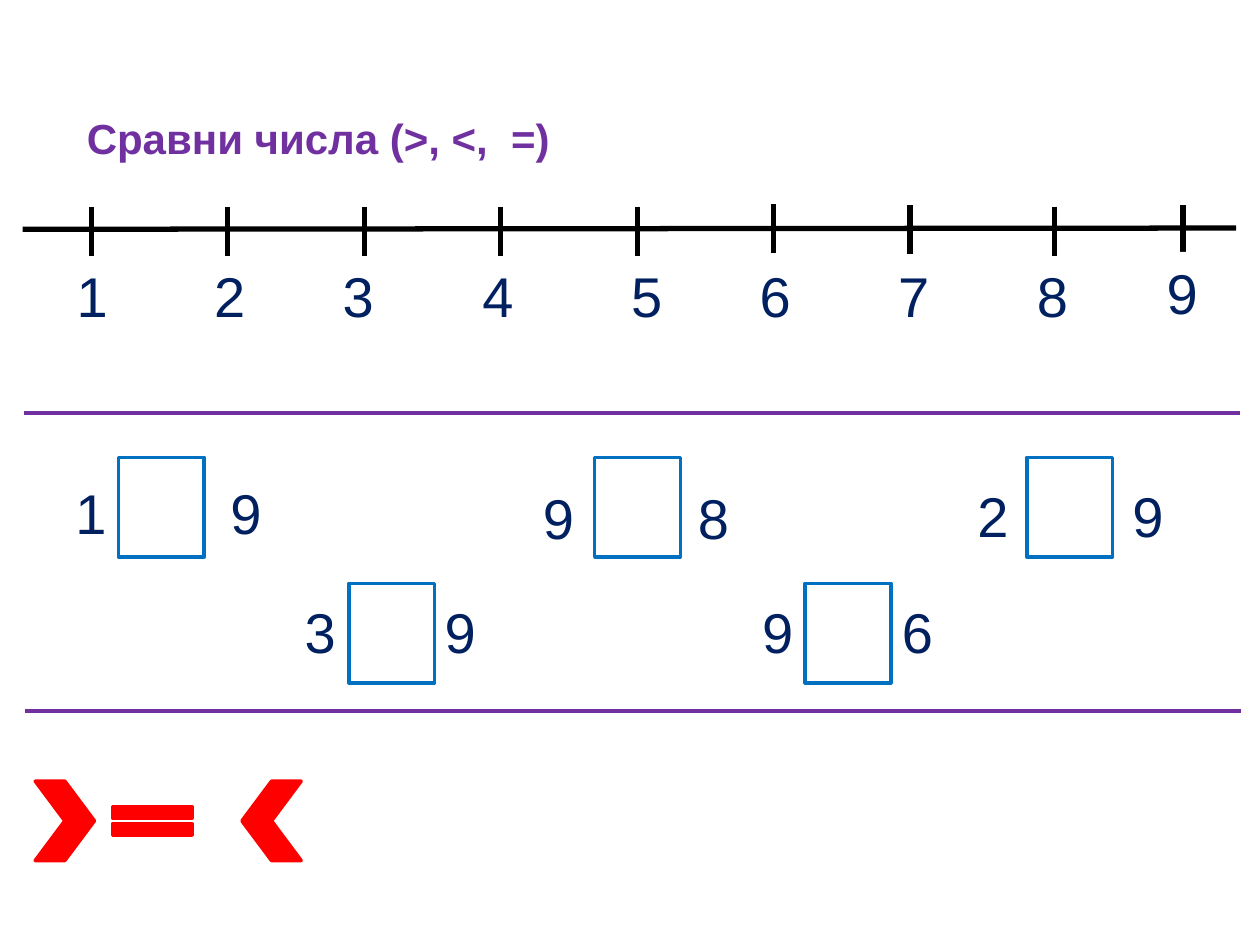
from lxml.etree import SubElement
from pptx import Presentation
from pptx.dml.color import RGBColor
from pptx.enum.shapes import MSO_CONNECTOR, MSO_SHAPE
from pptx.enum.text import MSO_AUTO_SIZE
from pptx.oxml.ns import qn
from pptx.util import Inches, Pt

COLS, ROWS = 100, 75
PURPLE, NAVY, BLUE, RED = "7030A0", "002060", "0070C0", "FF0000"
BLACK, WHITE = "000000", "FFFFFF"
TITLE = {"name": "Arial", "size": Pt(24), "bold": True}
DIGIT = {"name": "Arial", "size": Pt(32), "bold": False}


def rgb(value):
    return RGBColor.from_string(value)


class Page:
    """Style and current slide; all lengths are columns and rows of the grid."""

    def __init__(self, prs):
        self.slide = prs.slides.add_slide(prs.slide_layouts[6])
        self.col = prs.slide_width / COLS
        self.row = prs.slide_height / ROWS

    def grid(self, x, y, x2, y2):
        return (round(x * self.col), round(y * self.row),
                round(x2 * self.col), round(y2 * self.row))

    def text(self, text, box, font, color, tab=None, fill=None):
        sp = self.slide.shapes.add_textbox(*self.grid(*box))
        if fill:
            sp.fill.solid()
            sp.fill.fore_color.rgb = rgb(fill)
        tf = sp.text_frame
        tf.word_wrap = True
        tf.auto_size = MSO_AUTO_SIZE.SHAPE_TO_FIT_TEXT
        p = tf.paragraphs[0]
        if tab:
            tabs = SubElement(p._p.get_or_add_pPr(), qn("a:tabLst"))
            SubElement(tabs, qn("a:tab"), pos=str(round(tab * self.col)), algn="l")
        r = p.add_run()
        r.text = text
        for key, value in font.items():
            setattr(r.font, key, value)
        r.font.color.rgb = rgb(color)

    def shape(self, kind, box, line, fill=None, rotation=0):
        sp = self.slide.shapes.add_shape(kind, *self.grid(*box))
        sp.shadow.inherit = False
        sp.rotation = rotation
        if fill:
            sp.fill.solid()
            sp.fill.fore_color.rgb = rgb(fill)
        else:
            sp.fill.background()
        sp.line.color.rgb = rgb(line)
        sp.line.width = Pt(2)

    def line(self, ends, color, width):
        cxn = self.slide.shapes.add_connector(MSO_CONNECTOR.STRAIGHT, *self.grid(*ends))
        cxn.line.color.rgb = rgb(color)
        cxn.line.width = Pt(width)
        SubElement(cxn._element.spPr, qn("a:effectLst"))


def number_line(page):
    page.line((1.8, 18.2, 98.1, 18.1), BLACK, 3)
    ticks = [7.25 + 10.83 * i for i in range(7)] + [83.7, 93.9]
    tops = [16.4] * 5 + [16.2, 16.3, 16.4, 16.3]
    for x, y in zip(ticks, tops):
        page.line((x, y, x, y + 3.9), BLACK, 3)
    lefts = [5.1, 16, 26.2, 37.3, 49.1, 59.3, 70.3, 81.3]
    for number, x in enumerate(lefts, 1):
        page.text(str(number), (x, 20.3, 3.9, 6.4), DIGIT, NAVY)
    page.text("9", (91.6, 20, 5.1, 6.4), DIGIT, NAVY, fill=WHITE)


def comparisons(page):
    # left number, right number, text left, text top, tab, box left, box top
    tasks = [
        (1, 9, 5, 37.5, 12.3, 9.4, 36.3),
        (9, 8, 42.1, 37.9, 12.3, 47.2, 36.3),
        (2, 9, 76.6, 37.7, 12.3, 81.5, 36.3),
        (3, 9, 23.2, 46.9, 11.1, 27.7, 46.3),
        (9, 6, 59.5, 46.9, 11.1, 63.9, 46.3),
    ]
    for left, right, x, y, tab, box_x, box_y in tasks:
        page.text(f"{left}\t{right}", (x, y, 17.3, 6.4), DIGIT, NAVY, tab=tab)
        page.shape(MSO_SHAPE.RECTANGLE, (box_x, box_y, 6.8, 7.9), BLUE)


def signs(page):
    for kind, box, rotation in (
        (MSO_SHAPE.CHEVRON, (2.8, 62, 4.7, 6.3), 0),
        (MSO_SHAPE.MATH_EQUAL, (7.8, 63.2, 8.6, 3.9), 0),
        (MSO_SHAPE.CHEVRON, (19.2, 62, 4.7, 6.3), 180),
    ):
        page.shape(kind, box, RED, RED, rotation)


def main():
    prs = Presentation()
    prs.slide_width, prs.slide_height = Inches(10), Inches(7.5)
    page = Page(prs)
    page.text("Сравни числа (>, <,  =)", (5.9, 8.4, 79.1, 5), TITLE, PURPLE)
    number_line(page)
    for x, y in ((1.9, 32.8), (2, 56.4)):
        page.line((x, y, x + 96.5, y), PURPLE, 2.25)
    comparisons(page)
    signs(page)
    prs.save("out.pptx")


if __name__ == "__main__":
    main()
